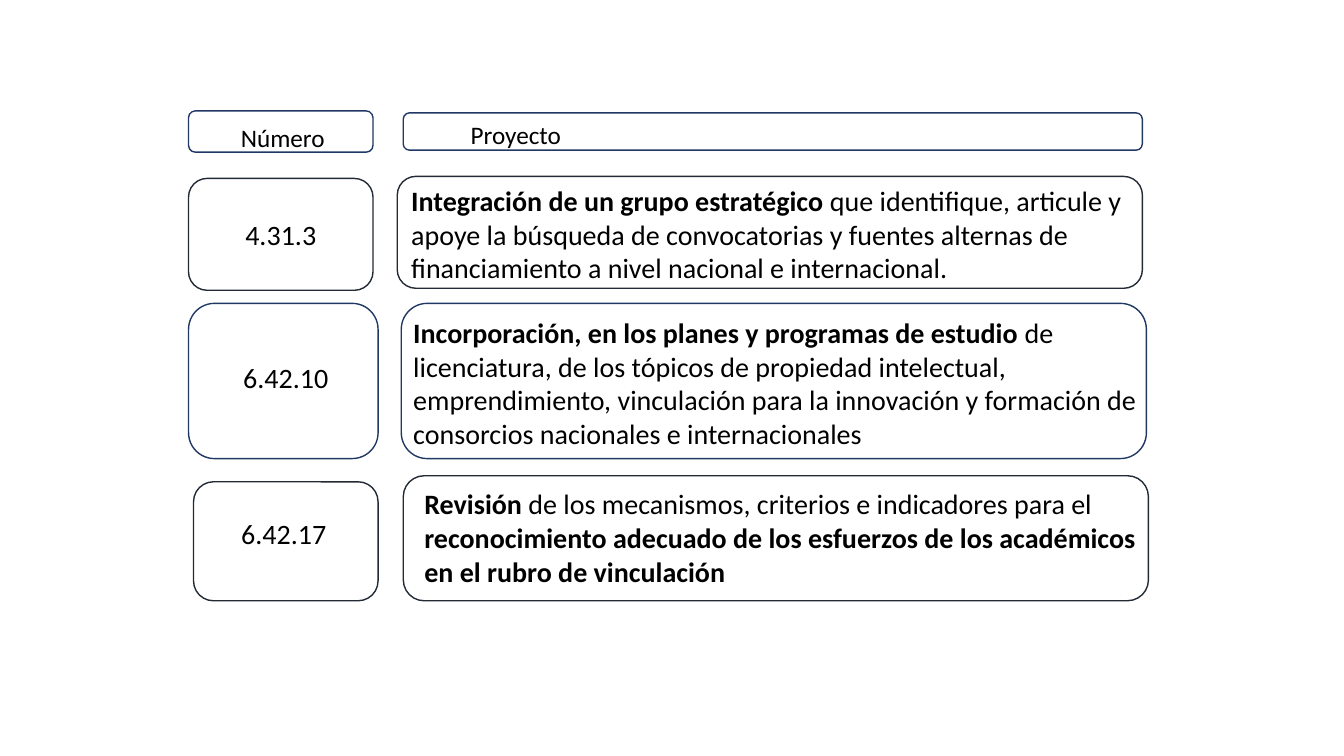
from typing import NamedTuple

from pptx import Presentation
from pptx import util as u
from pptx.dml import color
from pptx.enum import shapes, text

SLATE = "222A35"
NAVY = "203864"


class Area(NamedTuple):
    left: float
    top: float
    width: float
    height: float


class Run(NamedTuple):
    text: str
    bold: bool = False


class Row(NamedTuple):
    line: str
    number_frame: Area
    number_area: Area
    number: str
    project_frame: Area
    project_area: Area
    project: list[Run]
    size: int = 20
    centered: bool = True


ROWS = [
    Row(NAVY, Area(1.87, 1.1, 1.83, 0.41), Area(2.29, 1.16, 1.05, 0.4), "Número",
        Area(4, 1.12, 7.33, 0.37), Area(4.57, 1.13, 3.38, 0.34),
        [Run("Proyecto")], size=18, centered=False),
    Row(SLATE, Area(1.87, 1.77, 1.83, 1.11), Area(2.33, 2.11, 0.91, 0.44), "4.31.3",
        Area(3.94, 1.75, 7.39, 1.11), Area(3.98, 1.77, 7.48, 1.11),
        [Run("Integración de un grupo estratégico ", True),
         Run("que identifique, articule y apoye la búsqueda de convocatorias y fuentes "
             "alternas de financiamiento a nivel nacional e internacional.")]),
    Row(NAVY, Area(1.87, 3.01, 1.88, 1.54), Area(2.31, 3.53, 1.05, 0.44), "6.42.10",
        Area(3.98, 3.01, 7.39, 1.54), Area(4, 3.08, 7.39, 1.45),
        [Run("Incorporación, en los planes y programas de estudio ", True),
         Run("de licenciatura, de los tópicos de propiedad intelectual, emprendimiento, "
             "vinculación para la innovación y formación de consorcios nacionales e "
             "internacionales")]),
    Row(SLATE, Area(1.92, 4.78, 1.83, 1.18), Area(2.29, 5.07, 1.05, 0.44), "6.42.17",
        Area(4, 4.72, 7.39, 1.24), Area(4.11, 4.78, 7.48, 1.11),
        [Run("Revisión ", True),
         Run("de los mecanismos, criterios e indicadores para el "),
         Run("reconocimiento adecuado de los esfuerzos de los académicos en el rubro de "
             "vinculación", True)]),
]


def rgb(value: str) -> color.RGBColor:
    return color.RGBColor.from_string(value)


def add_frame(s, area: Area, line: str) -> None:
    sp = s.shapes.add_shape(shapes.MSO_SHAPE.ROUNDED_RECTANGLE, *map(u.Inches, area))
    sp.shadow.inherit = False
    sp.fill.background()
    sp.line.color.rgb = rgb(line)
    sp.line.width = u.Pt(1)


def add_text(s, area: Area, runs: list[Run], *, size: int, centered: bool = False) -> None:
    tf = s.shapes.add_textbox(*map(u.Inches, area)).text_frame
    tf.word_wrap = not centered
    tf.auto_size = text.MSO_AUTO_SIZE.SHAPE_TO_FIT_TEXT
    p = tf.paragraphs[0]
    p.alignment = text.PP_ALIGN.CENTER if centered else text.PP_ALIGN.LEFT
    for run in runs:
        r = p.add_run()
        r.text = run.text
        r.font.name = "Calibri"
        r.font.size = u.Pt(size)
        r.font.bold = run.bold
        r.font.color.rgb = rgb("000000")


def main() -> None:
    prs = Presentation()
    prs.slide_width = u.Inches(13.33)
    prs.slide_height = u.Inches(7.5)
    s = prs.slides.add_slide(prs.slide_layouts[6])
    for row in ROWS:
        add_frame(s, row.number_frame, row.line)
        add_text(s, row.number_area, [Run(row.number)], size=row.size, centered=row.centered)
        add_frame(s, row.project_frame, row.line)
        add_text(s, row.project_area, row.project, size=row.size)
    prs.save("out.pptx")


if __name__ == "__main__":
    main()
